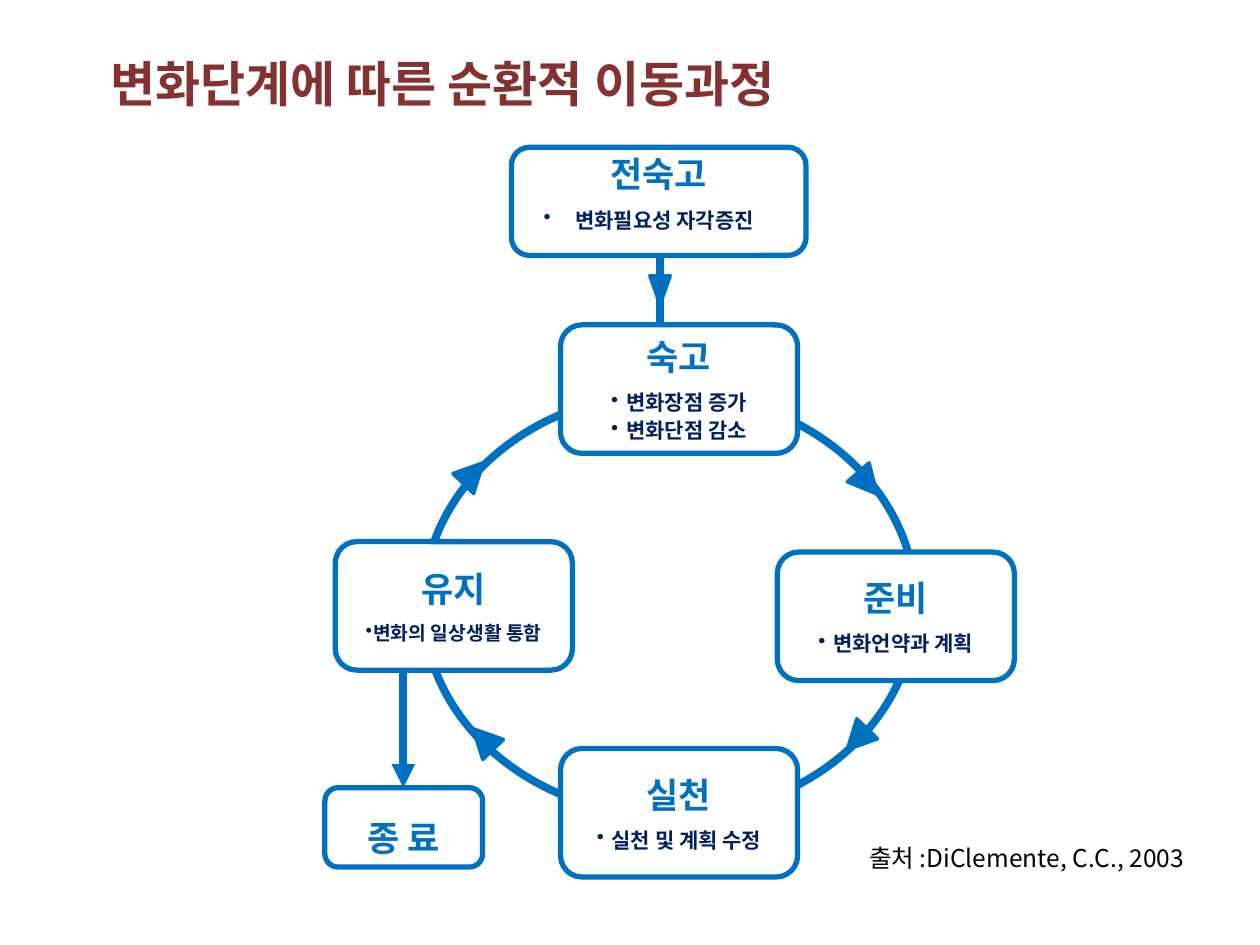
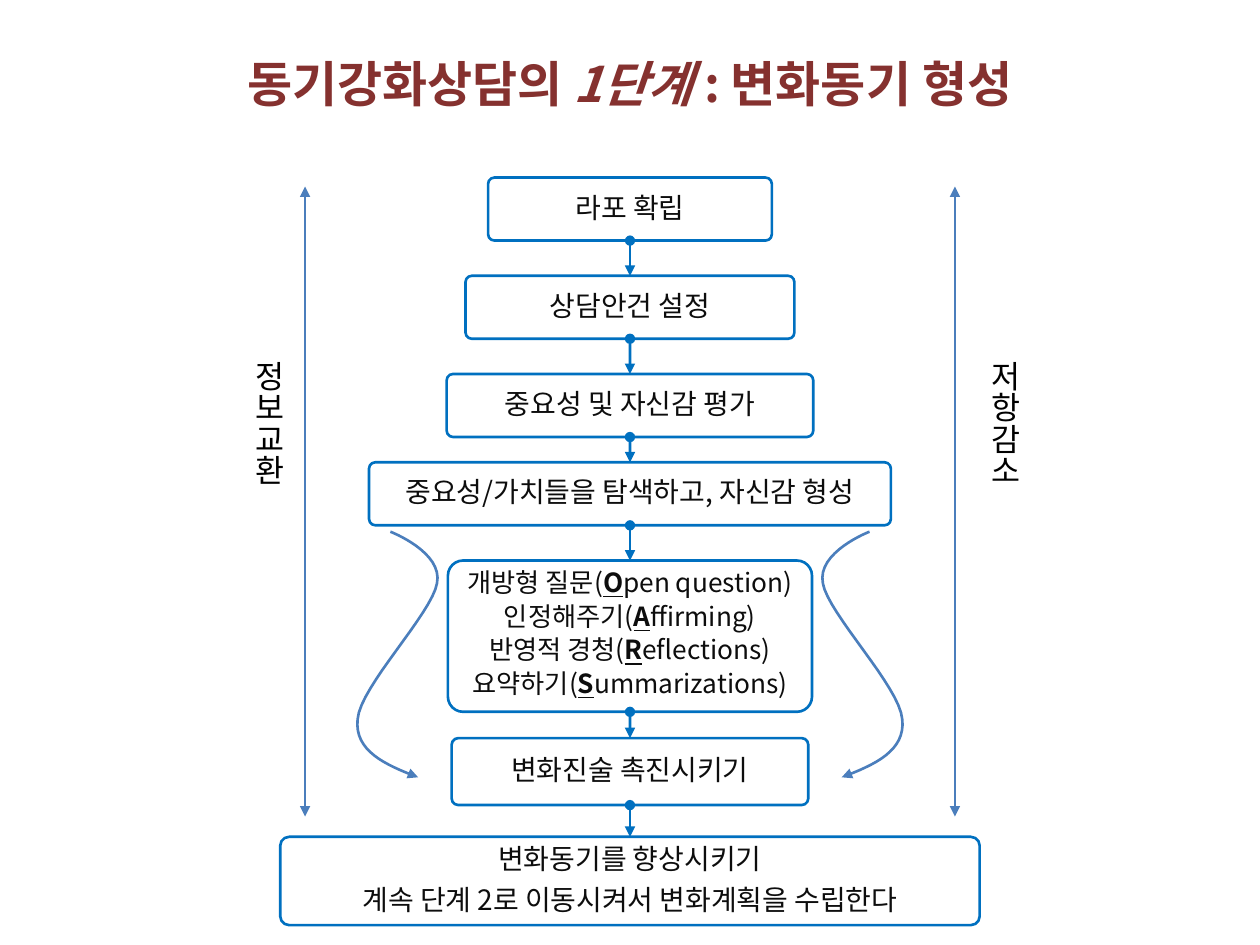
from itertools import pairwise

from lxml import etree
from pptx import Presentation
from pptx import util as u
from pptx.dml.color import RGBColor
from pptx.enum import shapes as sh, text as tx
from pptx.oxml import ns

FONT = "Noto Sans CJK KR"
BLUE, NAVY, MAROON, STEEL = "0070C0", "002060", "85312F", "4B7EBC"
WHITE, BLACK, INK = "FFFFFF", "000000", "0D0D0D"
CENTRE = 12.7  # middle of the slide, cm

TITLE = dict(size=28, bold=True, color=MAROON)
STAGE = dict(size=20, bold=True, color=BLUE)
POINT = dict(size=12, bold=True, color=NAVY)
STEP = dict(size=16, color=INK)
SKILL = dict(size=15, color=INK)
INITIAL = dict(SKILL, bold=True, underline=True)


def rgb(value):
    return RGBColor.from_string(value)


def cm(*lengths):
    return [u.Cm(length) for length in lengths]


# Text
def add_run(paragraph, words, style):
    run = paragraph.add_run()
    run.text = words
    values = dict(style, name=FONT)
    run.font.color.rgb = rgb(values.pop("color"))
    values["size"] = u.Pt(values["size"])
    for name, value in values.items():
        setattr(run.font, name, value)
    properties = run._r.get_or_add_rPr()
    properties.set("kern", "0")
    etree.SubElement(properties, ns.qn("a:ea")).set("typeface", FONT)


def write(shape, paragraphs, margins=(0.15,) * 4, anchor=tx.MSO_ANCHOR.MIDDLE):
    """Each paragraph is a list of (words, style) runs and a dict of formats."""
    frame = shape.text_frame
    sides = zip(("left", "top", "right", "bottom"), cm(*margins))
    settings = {f"margin_{side}": margin for side, margin in sides}
    settings.update(word_wrap=True, vertical_anchor=anchor)
    for name, value in settings.items():
        setattr(frame, name, value)
    for index, (runs, formats) in enumerate(paragraphs):
        paragraph = frame.add_paragraph() if index else frame.paragraphs[0]
        for name, value in formats.items():
            setattr(paragraph, name, value)
        for words, style in runs:
            add_run(paragraph, words, style)
    return frame


def layout(after=0, spacing=0.9, align=tx.PP_ALIGN.CENTER):
    return dict(alignment=align, line_spacing=spacing, space_after=u.Pt(after))


def add_bullet(paragraph, hang, right):
    properties = paragraph._p.get_or_add_pPr()
    for name, length in (("marL", hang), ("marR", right), ("indent", -hang)):
        properties.set(name, str(u.Cm(length)))
    etree.SubElement(properties, ns.qn("a:buChar")).set("char", "•")


def add_title_slide(deck, runs, left, align):
    slide = deck.slides.add_slide(deck.slide_layouts[5])
    title = slide.shapes.title
    title.left, title.top, title.width, title.height = cm(left, 0.78, 22.86, 1.8)
    write(title, [(runs, dict(alignment=align))], (0.25, 0.13, 0.25, 0.13))
    return slide


def add_label(slide, words, box, size, align, anchor, vertical=False):
    label = slide.shapes.add_textbox(*cm(*box))
    style = dict(size=size, color=BLACK)
    frame = write(label, [([(words, style)], dict(alignment=align))],
                  (0.25, 0.13, 0.25, 0.13), anchor)
    if vertical:
        frame._txBody.bodyPr.set("vert", "eaVert")


# Shapes and lines
def style_line(line, color, width, head=None, tail=None):
    line.color.rgb = rgb(color)
    line.width = u.Pt(width)
    for tag, kind in (("a:headEnd", head), ("a:tailEnd", tail)):
        if kind:
            etree.SubElement(line._ln, ns.qn(tag)).set("type", kind)


def add_outline(slide, kind, box, width, fill=None, rotation=0):
    shape = slide.shapes.add_shape(kind, *cm(*box))
    shape.shadow.inherit = False
    shape.rotation = rotation
    if fill:
        shape.fill.solid()
        shape.fill.fore_color.rgb = rgb(fill)
    else:
        shape.fill.background()
    style_line(shape.line, BLUE, width)
    return shape


def add_line(slide, start, end, color, width, head=None, tail=None):
    line = slide.shapes.add_connector(sh.MSO_CONNECTOR.STRAIGHT, *cm(*start, *end))
    style_line(line.line, color, width, head, tail)
    etree.SubElement(line._element.spPr, ns.qn("a:effectLst"))
    return line


def add_arrowhead(slide, left, top, rotation, width=0.58):
    add_outline(slide, sh.MSO_SHAPE.ISOSCELES_TRIANGLE,
                (left, top, width, 0.58), 2, BLUE, rotation)


def bezier(points, steps=16):
    for step in range(1, steps + 1):
        t = step / steps
        weights = ((1 - t) ** 3, 3 * t * (1 - t) ** 2, 3 * t * t * (1 - t), t ** 3)
        yield tuple(sum(w * p[axis] for w, p in zip(weights, points))
                    for axis in (0, 1))


def add_bypass(slide, side):
    """S-shaped arrow; side is -1 for the left and 1 for the right."""
    knots = [(4.83, 10.72), (4.83, 10.72), (3.76, 11.13), (3.89, 11.76),
             (3.99, 12.37), (5.44, 13.84), (5.49, 14.5),
             (5.56, 15.14), (4.93, 15.42), (4.27, 15.67)]
    curve = [knots[0]]
    for first in range(0, 9, 3):
        curve += bezier(knots[first:first + 4])
    start, *rest = [cm(CENTRE + side * x, y) for x, y in curve]
    builder = slide.shapes.build_freeform(*start)
    builder.add_line_segments(rest, close=False)
    bypass = builder.convert_to_shape()
    bypass.shadow.inherit = False
    bypass.fill.background()
    style_line(bypass.line, STEEL, 1.5, tail="triangle")


def add_stage(slide, name, points, left, top, size=(4.78, 2.59), hang=0.3,
              point_size=12, right=0, bottom=0.15, fill=WHITE, spacing=1.0):
    stage = add_outline(slide, sh.MSO_SHAPE.ROUNDED_RECTANGLE,
                        (left, top, *size), 3, fill)
    style = dict(POINT, size=point_size)
    paragraphs = [([(name, STAGE)], layout(7, spacing))]
    paragraphs += [([(point, style)], layout(1.8, 1.0)) for point in points]
    frame = write(stage, paragraphs, (0.15, 0.15, 0.15, bottom))
    for paragraph in frame.paragraphs[1:]:
        add_bullet(paragraph, hang, right)


def add_step(slide, paragraphs, top, width, height):
    step = add_outline(slide, sh.MSO_SHAPE.ROUNDED_RECTANGLE,
                       (CENTRE - width / 2, top, width, height), 1.5)
    step.adjustments[0] = 0.1
    write(step, paragraphs, (0.1,) * 4)
    return step


# Slides
def build_cycle(deck):
    slide = add_title_slide(deck, [("변화단계에 따른 순환적 이동과정", TITLE)],
                            1.98, tx.PP_ALIGN.LEFT)
    add_outline(slide, sh.MSO_SHAPE.OVAL, (8.53, 7.92, 9.93, 8.53), 4.5)

    # Stages around the ring
    add_stage(slide, "숙고", ["변화장점 증가", "변화단점 감소"], 11.3, 6.55)
    add_stage(slide, "준비", ["변화언약과 계획"], 15.67, 11.13)
    add_stage(slide, "실천", ["실천 및 계획 수정"], 11.3, 15.09)
    add_stage(slide, "유지", ["변화의 일상생활 통함"], 6.76, 10.92,
              hang=0.15, point_size=11)
    for left, top, rotation in ((17.2, 9.45, 139), (16.99, 14.61, 224),
                                (9.45, 14.61, 316), (9.25, 9.25, 44)):
        add_arrowhead(slide, left, top, rotation)

    # Way out and way in
    add_line(slide, (8.13, 13.49), (8.13, 15.88), BLUE, 4.5, tail="triangle")
    add_stage(slide, "종 료", [], 6.55, 15.88, (3.18, 1.6), fill=None, spacing=1.5)
    add_stage(slide, "전숙고", ["변화필요성 자각증진"], 10.31, 2.97, (5.94, 2.18),
              hang=0.64, right=0.4, bottom=0.5)
    add_line(slide, (13.3, 5.16), (13.3, 6.55), BLUE, 4.5)
    add_arrowhead(slide, 13.1, 5.56, 180, 0.41)

    add_label(slide, "출처 :DiClemente, C.C., 2003", (17.27, 16.87, 7.34, 0.86),
              14, tx.PP_ALIGN.LEFT, tx.MSO_ANCHOR.TOP)


def build_first_phase(deck):
    runs = [("동기강화상담의 ", TITLE), ("1단계 ", dict(TITLE, italic=True)),
            (": 변화동기 형성", TITLE)]
    slide = add_title_slide(deck, runs, 1.27, tx.PP_ALIGN.CENTER)

    # Steps from top to bottom
    skills = [("개방형 질문(", "O", "pen question)"), ("인정해주기(", "A", "ffirming)"),
              ("반영적 경청(", "R", "eflections)"), ("요약하기(", "S", "ummarizations)")]
    skill_lines = [(list(zip(parts, (SKILL, INITIAL, SKILL))),
                    layout(5.25, u.Pt(14))) for parts in skills]

    def lines(*texts):
        return [([(words, STEP)], layout(5.6)) for words in texts]

    steps = [add_step(slide, *step) for step in (
        (lines("라포 확립"), 3.58, 5.72, 1.27),
        (lines("상담안건 설정"), 5.56, 6.63, 1.27),
        (lines("중요성 및 자신감 평가"), 7.54, 7.39, 1.27),
        (lines("중요성/가치들을 탐색하고, 자신감 형성"), 9.32, 10.52, 1.27),
        (skill_lines, 11.3, 7.34, 3.05),
        (lines("변화진술 촉진시키기"), 14.88, 7.19, 1.35),
        (lines("변화동기를 향상시키기", "계속 단계 2로 이동시켜서 변화계획을 수립한다"),
         16.87, 14.1, 1.78))]
    for upper, lower in pairwise(steps):
        link = add_line(slide, (0, 0), (0, 0), BLUE, 1.5, "oval", "triangle")
        link.begin_connect(upper, 2)
        link.end_connect(lower, 0)

    # Processes running alongside
    for side, name, label_left in ((-1, "정보교환", 4.78), (1, "저항감소", 19.63)):
        x = CENTRE + side * 6.55
        add_line(slide, (x, 3.76), (x, 16.46), STEEL, 1.5, "triangle", "triangle")
        add_bypass(slide, side)
        add_label(slide, name, (label_left, 7.14, 1.27, 4.95), 18,
                  tx.PP_ALIGN.CENTER, tx.MSO_ANCHOR.MIDDLE, vertical=True)


def main():
    deck = Presentation()
    deck.slide_width, deck.slide_height = cm(25.4, 19.05)
    build_cycle(deck)
    build_first_phase(deck)
    deck.save("out.pptx")


if __name__ == "__main__":
    main()
